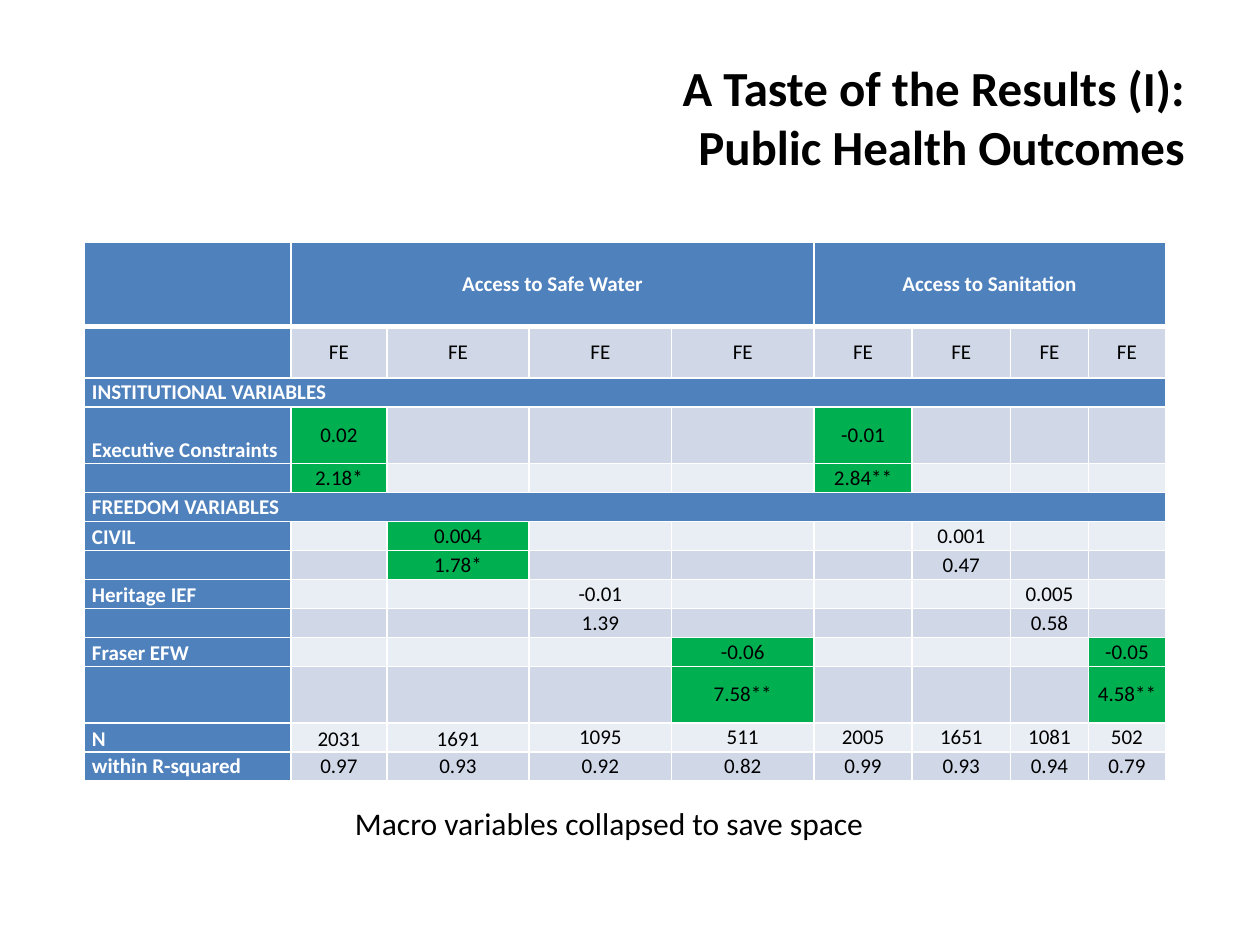
"""Build a slide with a regression table of public health outcomes."""
from lxml import etree
from pptx import Presentation
from pptx import util as u
from pptx.dml.color import RGBColor
from pptx.enum import text
from pptx.oxml.ns import qn

THEME = dict(font="Calibri", title=28, body=12, caption=18, ink="000000", paper="FFFFFF",
             head="4F81BD", bands=("E9EDF4", "D0D8E8"), signif="00B050", rule=1, head_rule=3)
SIZE = (10, 7.5)
TITLE = ("A Taste of the Results (I):\nPublic Health Outcomes", (0.05, 0.04, 0.9, 0.167))
CAPTION = ("Macro variables collapsed to save space", (0.125, 0.844, 0.717, 0.053))
TABLE_AT = (0.067, 0.256)
COLS = [1.64, 0.76, 1.13, 1.13, 1.13, 0.78, 0.78, 0.62, 0.61]
ROW, TALL = 0.23, {0: 0.67, 1: 0.41, 3: 0.45, 11: 0.45}
ROWS = [
    ("", {1: "Access to Safe Water", 5: "Access to Sanitation"}),
    ("", {c: "FE" for c in range(1, 9)}),
    ("INSTITUTIONAL VARIABLES", {}),
    ("Executive Constraints", {1: "0.02", 5: "-0.01"}),
    ("", {1: "2.18*", 5: "2.84**"}),
    ("FREEDOM VARIABLES", {}),
    ("CIVIL", {2: "0.004", 6: "0.001"}),
    ("", {2: "1.78*", 6: "0.47"}),
    ("Heritage IEF", {3: "-0.01", 7: "0.005"}),
    ("", {3: "1.39", 7: "0.58"}),
    ("Fraser EFW", {4: "-0.06", 8: "-0.05"}),
    ("", {4: "7.58**", 8: "4.58**"}),
    ("N", dict(enumerate("2031 1691 1095 511 2005 1651 1081 502".split(), 1))),
    ("within R-squared", dict(enumerate("0.97 0.93 0.92 0.82 0.99 0.93 0.94 0.79".split(), 1))),
]
SECTIONS = (2, 5)
MERGES = [(0, 1, 4), (0, 5, 8)] + [(r, 0, 8) for r in SECTIONS]
LOW_LABELS = (3, 6, 8, 10, 12)
LOW_CELLS = [(r, 0) for r in LOW_LABELS] + [(12, 1), (12, 2)]
ALIGN, ANCHOR = text.PP_ALIGN, text.MSO_ANCHOR


def assign(obj, values):
    for name, value in values.items():
        setattr(obj, name, value)


def write(tf, words, size, color, align, bold=False):
    p = tf.paragraphs[0]
    p.text, p.alignment = words, align
    for r in p.runs:
        assign(r.font, dict(name=THEME["font"], size=u.Pt(size), bold=bold))
        r.font.color.rgb = RGBColor.from_string(color)
    etree.SubElement(p._p, qn("a:endParaRPr"), sz=str(size * 100))


def add_text(s, item, size, align, bold=False, **frame):
    words, shares = item
    box = [u.Inches(share * SIZE[i % 2]) for i, share in enumerate(shares)]
    tf = s.shapes.add_textbox(*box).text_frame
    assign(tf, dict(word_wrap=True, **frame))
    write(tf, words, size, THEME["ink"], align, bold)


def set_borders(cell, row):
    thick = {"lnB": row == 0, "lnT": row == 1}
    for i, side in enumerate(("lnL", "lnR", "lnT", "lnB")):
        width = THEME["head_rule" if thick.get(side) else "rule"]
        ln = etree.Element(qn("a:" + side), w=str(u.Pt(width)))
        fill = etree.SubElement(ln, qn("a:solidFill"))
        etree.SubElement(fill, qn("a:srgbClr"), val=THEME["paper"])
        cell._tc.get_or_add_tcPr().insert(i, ln)


def significant(row, col):
    below = ROWS[row + 1][1] if row + 1 < len(ROWS) else {}
    return any("*" in values.get(col, "") for values in (ROWS[row][1], below))


def fill_cell(cell, row, col):
    label, values = ROWS[row]
    head = col == 0 or row == 0 or row in SECTIONS
    fill = THEME["head"] if head else THEME["bands"][row % 2]
    if row > 2 and not head and significant(row, col):
        fill = THEME["signif"]
    assign(cell, dict(margin_left=u.Inches(0.06), margin_right=u.Inches(0.06),
                      margin_top=0, margin_bottom=0,
                      vertical_anchor=ANCHOR.BOTTOM if (row, col) in LOW_CELLS else ANCHOR.MIDDLE))
    cell.fill.solid()
    cell.fill.fore_color.rgb = RGBColor.from_string(fill)
    set_borders(cell, row)
    write(cell.text_frame, values.get(col, "") if col else label, THEME["body"],
          THEME["paper" if head else "ink"], ALIGN.CENTER if col else ALIGN.LEFT, head)


def add_results(s):
    heights = [TALL.get(r, ROW) for r in range(len(ROWS))]
    at = [u.Inches(share * side) for share, side in zip(TABLE_AT, SIZE)]
    size = u.Inches(sum(COLS)), u.Inches(sum(heights))
    table = s.shapes.add_table(len(ROWS), len(COLS), *at, *size).table
    for column, width in zip(table.columns, COLS):
        column.width = u.Inches(width)
    for r, height in enumerate(heights):
        table.rows[r].height = u.Inches(height)
        for c in range(len(COLS)):
            fill_cell(table.cell(r, c), r, c)
    for r, first, last in MERGES:
        table.cell(r, first).merge(table.cell(r, last))


def main():
    prs = Presentation()
    assign(prs, dict(slide_width=u.Inches(SIZE[0]), slide_height=u.Inches(SIZE[1])))
    s = prs.slides.add_slide(prs.slide_layouts[6])
    add_text(s, TITLE, THEME["title"], ALIGN.RIGHT, True, vertical_anchor=ANCHOR.MIDDLE)
    add_results(s)
    add_text(s, CAPTION, THEME["caption"], ALIGN.CENTER,
             auto_size=text.MSO_AUTO_SIZE.SHAPE_TO_FIT_TEXT)
    prs.save("out.pptx")


if __name__ == "__main__":
    main()
